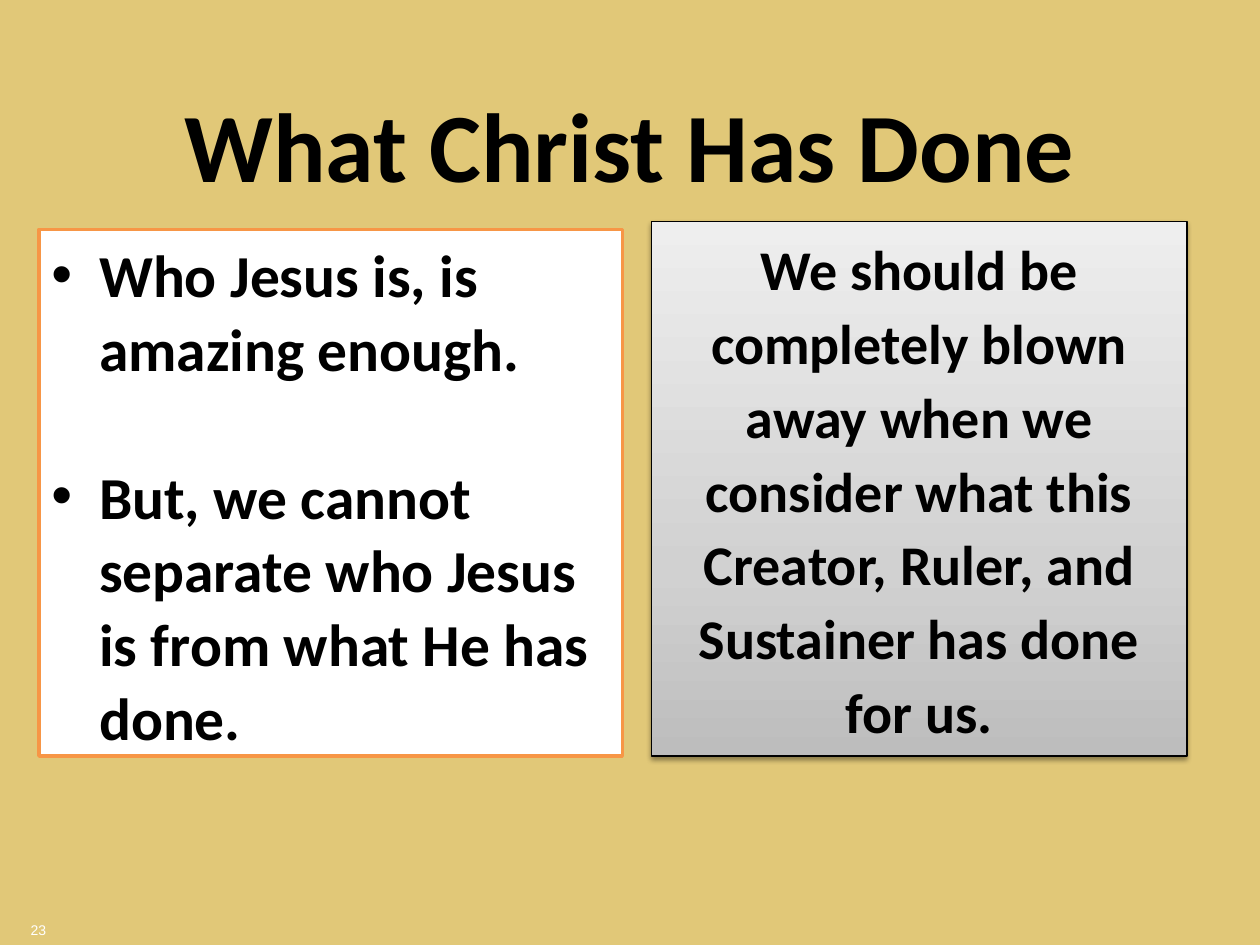
from lxml.etree import SubElement
from pptx import Presentation
from pptx.dml.color import RGBColor
from pptx.enum.shapes import MSO_SHAPE as SHAPE
from pptx.enum.text import MSO_ANCHOR as ANCHOR, PP_ALIGN as ALIGN
from pptx.oxml.ns import qn
from pptx.util import Inches, Pt

SAND = RGBColor(0xE1, 0xC8, 0x78)
WHITE = RGBColor(0xFF, 0xFF, 0xFF)
BLACK = RGBColor(0x00, 0x00, 0x00)
ORANGE = RGBColor(0xF7, 0x96, 0x46)
GREYS = [
    (0, RGBColor(0xBD, 0xBD, 0xBD)),
    (35, RGBColor(0xD1, 0xD1, 0xD1)),
    (100, RGBColor(0xEE, 0xEE, 0xEE)),
]


class Deck:
    COLUMNS, ROWS = 100, 75
    FONT = "Calibri"
    LEADING = Pt(42.2)
    INDENT = Inches(0.38)

    def __init__(self):
        self.prs = Presentation()
        self.prs.slide_width, self.prs.slide_height = Inches(10), Inches(7.5)
        self.slide = self.prs.slides.add_slide(self.prs.slide_layouts[6])
        fill = self.slide.background.fill
        fill.solid()
        fill.fore_color.rgb = SAND

    def area(self, col, row, cols, rows):
        dx = self.prs.slide_width / self.COLUMNS
        dy = self.prs.slide_height / self.ROWS
        return [round(v) for v in (col * dx, row * dy, cols * dx, rows * dy)]

    def set_text(self, tf, text, size, align, color=BLACK, font=FONT, bold=True):
        tf.word_wrap = True
        tf.text = text
        for p in tf.paragraphs:
            p.alignment = align
            for r in p.runs:
                r.font.name, r.font.size, r.font.bold = font, Pt(size), bold
                r.font.color.rgb = color

    def title(self, text, *cells):
        tf = self.slide.shapes.add_textbox(*self.area(*cells)).text_frame
        tf.vertical_anchor = ANCHOR.MIDDLE
        self.set_text(tf, text, 56, ALIGN.CENTER)

    def page_number(self, text, *cells):
        tf = self.slide.shapes.add_textbox(*self.area(*cells)).text_frame
        tf.margin_left = tf.margin_right = Inches(0.07)
        tf.margin_top = tf.margin_bottom = Inches(0.04)
        self.set_text(tf, text, 8, ALIGN.CENTER, WHITE, "Arial", False)

    def panel(self, text, size, align, line, width, *cells):
        s = self.slide.shapes.add_shape(SHAPE.RECTANGLE, *self.area(*cells))
        s.shadow.inherit = False
        s.fill.solid()
        s.fill.fore_color.rgb = WHITE
        s.line.color.rgb, s.line.width = line, Pt(width)
        tf = s.text_frame
        tf.vertical_anchor = ANCHOR.TOP
        self.set_text(tf, text, size, align)
        for p in tf.paragraphs:
            p.line_spacing = self.LEADING
        return s

    def bullets(self, s):
        for p in s.text_frame.paragraphs:
            p.space_after = self.LEADING
            pPr = p._p.get_or_add_pPr()
            pPr.set("marL", str(self.INDENT))
            pPr.set("indent", str(-self.INDENT))
            SubElement(pPr, qn("a:buFont"), typeface="Arial")
            SubElement(pPr, qn("a:buChar"), char="•")
        s.text_frame.paragraphs[-1].space_after = Pt(0)

    def gradient(self, s, stops):
        s.fill.gradient()
        s.fill.gradient_angle = 90
        gs_list = s._element.spPr.find(".//" + qn("a:gsLst"))
        for gs in list(gs_list):
            gs_list.remove(gs)
        for share, color in stops:
            gs = SubElement(gs_list, qn("a:gs"), pos=str(share * 1000))
            SubElement(gs, qn("a:srgbClr"), val=str(color))

    def shadow(self, s, color, alpha, blur, distance):
        effects = s._element.spPr.find(qn("a:effectLst"))
        outer = SubElement(effects, qn("a:outerShdw"), blurRad=str(Pt(blur)),
                           dist=str(Pt(distance)), dir="5400000", rotWithShape="0")
        clr = SubElement(outer, qn("a:srgbClr"), val=str(color))
        SubElement(clr, qn("a:alpha"), val=str(alpha * 1000))


def main():
    deck = Deck()
    deck.title("What Christ Has Done", 4.3, 1.6, 91.4, 19.5)
    points = deck.panel(
        "Who Jesus is, is amazing enough.\n"
        "But, we cannot separate who Jesus is from what He has done.",
        34, ALIGN.LEFT, ORANGE, 2, 3.1, 18.2, 46.3, 41.8)
    deck.bullets(points)
    response = deck.panel(
        "We should be completely blown away when we consider what this "
        "Creator, Ruler, and Sustainer has done for us.",
        32, ALIGN.CENTER, BLACK, 0.75, 51.7, 17.6, 42.5, 42.4)
    deck.gradient(response, GREYS)
    deck.shadow(response, BLACK, 38, 3.1, 1.6)
    deck.page_number("23", 0, 72.7, 6.1, 2.3)
    deck.prs.save("out.pptx")


if __name__ == "__main__":
    main()
